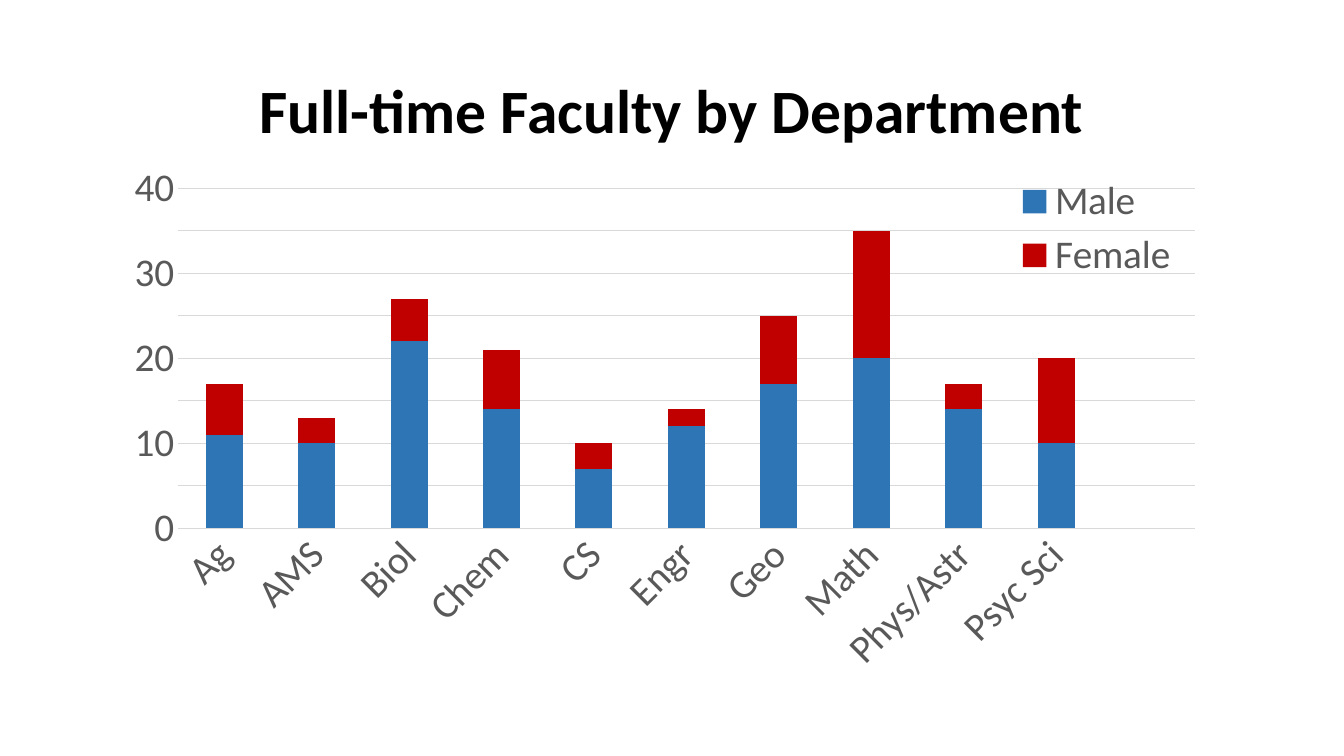
from dataclasses import dataclass

from lxml import etree
from pptx import Presentation
from pptx.chart.chart import Chart
from pptx.chart.data import CategoryChartData
from pptx.dml.color import RGBColor
from pptx.enum.chart import XL_CHART_TYPE, XL_LEGEND_POSITION, XL_TICK_MARK
from pptx.enum.text import MSO_ANCHOR, MSO_AUTO_SIZE, PP_ALIGN
from pptx.oxml.ns import qn
from pptx.text.text import Font, TextFrame
from pptx.util import Cm, Pt

STACKED = XL_CHART_TYPE.COLUMN_STACKED
LEGEND_BOTTOM = XL_LEGEND_POSITION.BOTTOM
NO_TICKS = XL_TICK_MARK.NONE
MIDDLE = MSO_ANCHOR.MIDDLE
NO_AUTOFIT = MSO_AUTO_SIZE.NONE
CENTER = PP_ALIGN.CENTER

FONT_NAME = "Calibri"
TITLE_ONLY_LAYOUT = 5
COLORS = {
    "title": "000000",
    "label": "595959",
    "rule": "D9D9D9",
    "male": "2E75B6",
    "female": "C00000",
}


@dataclass(frozen=True)
class Headcount:
    name: str
    color: str
    values: tuple[int | None, ...]


@dataclass(frozen=True)
class Region:
    """A rectangle in fractions of the chart's width and height."""
    x: float
    y: float
    w: float
    h: float


# The last slot is an empty column at the right of the chart.
DEPARTMENTS = ("Ag", "AMS", "Biol", "Chem", "CS", "Engr", "Geo", "Math",
               "Phys/Astr", "Psyc Sci", "")
HEADCOUNTS = (
    Headcount("Male", "male", (11, 10, 22, 14, 7, 12, 17, 20, 14, 10, None)),
    Headcount("Female", "female", (6, 3, 5, 7, 3, 2, 8, 15, 3, 10, None)),
)
PLOT_REGION = Region(0.059, 0.058, 0.92, 0.564)
LEGEND_REGION = Region(0.81, 0.03, 0.16, 0.19)


def rgb(color: str) -> RGBColor:
    return RGBColor.from_string(COLORS[color])


def format_font(font: Font, *, size: float, color: str, bold: bool = False) -> None:
    font.name = FONT_NAME
    font.size = Pt(size)
    font.bold = bold
    font.color.rgb = rgb(color)


def write_text(frame: TextFrame, text: str, *, size: float, color: str,
               bold: bool = False, align: PP_ALIGN = CENTER,
               line_spacing: float = 0.9) -> None:
    frame.word_wrap = True
    frame.auto_size = NO_AUTOFIT
    frame.vertical_anchor = MIDDLE
    paragraph = frame.paragraphs[0]
    paragraph.alignment = align
    paragraph.line_spacing = line_spacing
    run = paragraph.add_run()
    run.text = text
    format_font(run.font, size=size, color=color, bold=bold)


def place(parent: etree._Element, index: int, region: Region, inner: bool = False) -> None:
    """Give a chart part a manual layout, as its child number index."""
    for old_layout in parent.findall(qn("c:layout")):
        parent.remove(old_layout)
    layout = parent.makeelement(qn("c:layout"))
    parent.insert(index, layout)
    manual = etree.SubElement(layout, qn("c:manualLayout"))
    settings = [("layoutTarget", "inner")] if inner else []
    settings += [("xMode", "edge"), ("yMode", "edge")]
    settings += [(side, str(getattr(region, side))) for side in ("x", "y", "w", "h")]
    for tag, value in settings:
        etree.SubElement(manual, qn(f"c:{tag}")).set("val", value)


def format_axes(chart: Chart) -> None:
    departments, counts = chart.category_axis, chart.value_axis
    for axis in (departments, counts):
        axis.major_tick_mark = axis.minor_tick_mark = NO_TICKS
        format_font(axis.tick_labels.font, size=28, color="label")
    counts.minimum_scale, counts.maximum_scale, counts.major_unit = 0, 40, 5
    counts.format.line.fill.background()
    for line in (departments.format.line, counts.major_gridlines.format.line):
        line.color.rgb = rgb("rule")
        line.width = Pt(0.75)
    label_body = departments._element.find(f"{qn('c:txPr')}/{qn('a:bodyPr')}")
    label_body.set("rot", "-2700000")
    label_body.set("vert", "horz")


def format_legend(chart: Chart) -> None:
    chart.has_legend = True
    legend = chart.legend
    legend.position = LEGEND_BOTTOM
    legend.include_in_layout = True
    format_font(legend.font, size=28, color="label")
    place(legend._element, 1, LEGEND_REGION)


def add_faculty_chart(slide) -> None:
    data = CategoryChartData(number_format="General")
    data.categories = DEPARTMENTS
    for headcount in HEADCOUNTS:
        data.add_series(headcount.name, headcount.values)
    chart = slide.shapes.add_chart(
        STACKED, Cm(2.84), Cm(3.86), Cm(27.86), Cm(15.19), data).chart
    chart.has_title = False
    format_font(chart.font, size=28, color="title")

    plot = chart.plots[0]
    plot.gap_width, plot.overlap = 150, 100
    plot.vary_by_categories = False
    for series, headcount in zip(plot.series, HEADCOUNTS):
        series.format.fill.solid()
        series.format.fill.fore_color.rgb = rgb(headcount.color)
    format_axes(chart)
    format_legend(chart)
    place(plot._element.getparent(), 0, PLOT_REGION, inner=True)


def main() -> None:
    presentation = Presentation()
    presentation.slide_width, presentation.slide_height = Cm(33.87), Cm(19.05)
    slide = presentation.slides.add_slide(presentation.slide_layouts[TITLE_ONLY_LAYOUT])
    title = slide.shapes.title
    title.left, title.top, title.width, title.height = Cm(2.33), Cm(1.01), Cm(29.21), Cm(3.68)
    write_text(title.text_frame, "Full-time Faculty by Department",
               size=44, color="title", bold=True)
    add_faculty_chart(slide)
    presentation.save("out.pptx")


if __name__ == "__main__":
    main()
